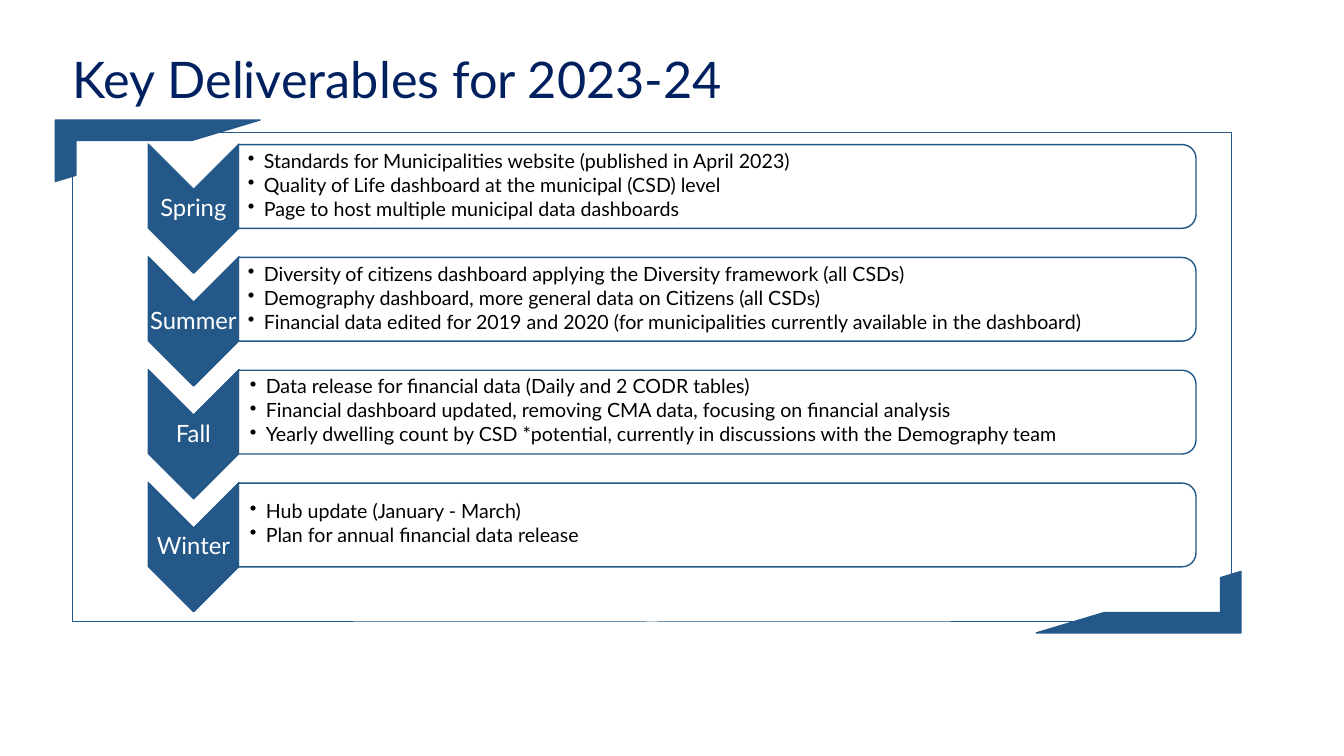
from lxml import etree
from pptx import Presentation
from pptx.dml.color import RGBColor
from pptx.enum.shapes import MSO_SHAPE
from pptx.enum.text import MSO_ANCHOR, MSO_AUTO_SIZE, PP_ALIGN
from pptx.oxml.ns import qn
from pptx.util import Pt

CHEVRON, CARD = MSO_SHAPE.CHEVRON, MSO_SHAPE.ROUND_2_SAME_RECTANGLE
CORNER, RECT = MSO_SHAPE.HALF_FRAME, MSO_SHAPE.RECTANGLE
MIDDLE, TOP = MSO_ANCHOR.MIDDLE, MSO_ANCHOR.TOP
CENTER, LEFT = PP_ALIGN.CENTER, PP_ALIGN.LEFT
GROW = MSO_AUTO_SIZE.SHAPE_TO_FIT_TEXT

BLUE, NAVY, WHITE, BLACK = "235888", "002060", "FFFFFF", "000000"
FONT = "Lato"
TITLE = "Key Deliverables for 2023-24"
SEASONS = [
    ("Spring", 6.5, [
        "Standards for Municipalities website (published in April 2023)",
        "Quality of Life dashboard at the municipal (CSD) level",
        "Page to host multiple municipal data dashboards",
    ]),
    ("Summer", 6.5, [
        "Diversity of citizens dashboard applying the Diversity framework (all CSDs)",
        "Demography dashboard, more general data on Citizens (all CSDs)",
        "Financial data edited for 2019 and 2020 (for municipalities currently "
        "available in the dashboard)",
    ]),
    ("Fall", 7.9, [
        "Data release for financial data (Daily and 2 CODR tables)",
        "Financial dashboard updated, removing CMA data, focusing on financial analysis",
        "Yearly dwelling count by CSD *potential, currently in discussions with "
        "the Demography team",
    ]),
    ("Winter", 7.9, [
        "Hub update (January - March)",
        "Plan for annual financial data release",
    ]),
]
STEP = 80.6
INDENT = 11.4

prs = Presentation()
prs.slide_width, prs.slide_height = Pt(960), Pt(540)
slide = prs.slides.add_slide(prs.slide_layouts[6])


def color(code):
    return RGBColor.from_string(code)


def shape(kind, box, fill=None, width=1, turn=0):
    item = slide.shapes.add_shape(kind, *map(Pt, box))
    item.shadow.inherit = False
    item.rotation = turn
    if fill:
        item.fill.solid()
        item.fill.fore_color.rgb = color(fill)
    else:
        item.fill.background()
    item.line.color.rgb = color(BLUE)
    item.line.width = Pt(width)
    return item


def text(box, lines, size, ink, align=CENTER, anchor=MIDDLE, inset=(0.7,) * 4,
         space=None, bullet=False, wrap=True):
    item = slide.shapes.add_textbox(*map(Pt, box))
    frame = item.text_frame
    frame.word_wrap = wrap
    frame.vertical_anchor = anchor
    frame.margin_left, frame.margin_top, frame.margin_right, frame.margin_bottom = map(Pt, inset)
    frame.text = "\n".join(lines)
    for para in frame.paragraphs:
        para.alignment = align
        if space:
            para.line_spacing = 0.9
            para.space_after = Pt(space)
        if bullet:
            props = para._p.get_or_add_pPr()
            props.set("marL", str(Pt(INDENT)))
            props.set("indent", str(-Pt(INDENT)))
            etree.SubElement(props, qn("a:buChar")).set("char", "•")
        for run in para.runs:
            run.font.name = FONT
            run.font.size = Pt(size)
            run.font.color.rgb = color(ink)
    return item


for row, (season, pad, tasks) in enumerate(SEASONS):
    drop = row * STEP
    shape(CHEVRON, (92.2, 116.6 + drop, 92.2, 64.8), BLUE, turn=90)
    text((105.8, 135.4 + drop, 64.8, 27.4), [season], 17, WHITE, space=6)
    card = shape(CARD, (482.4, -208.8 + drop, 59.8, 684), WHITE, turn=90)
    tint = card.fill._xPr.find(qn("a:solidFill"))[0]
    etree.SubElement(tint, qn("a:alpha")).set("val", "90000")
    text((170.6, 105.8 + drop, 681, 54), tasks, 14, BLACK, LEFT,
         inset=(pad, 0.7, 0.7, 0.7), space=2, bullet=True)

shape(CORNER, (740.2, 408.2, 146.2, 43.9), BLUE, turn=180)
shape(RECT, (51.8, 94.3, 828, 350), width=0.75)
shape(CORNER, (39.6, 85.7, 146.2, 43.9), BLUE)

title = text((39.6, 31, 488.2, 51), [TITLE], 36, NAVY, anchor=TOP,
             inset=(7.2, 3.6, 7.2, 3.6), wrap=False)
title.text_frame.auto_size = GROW

prs.save("out.pptx")
